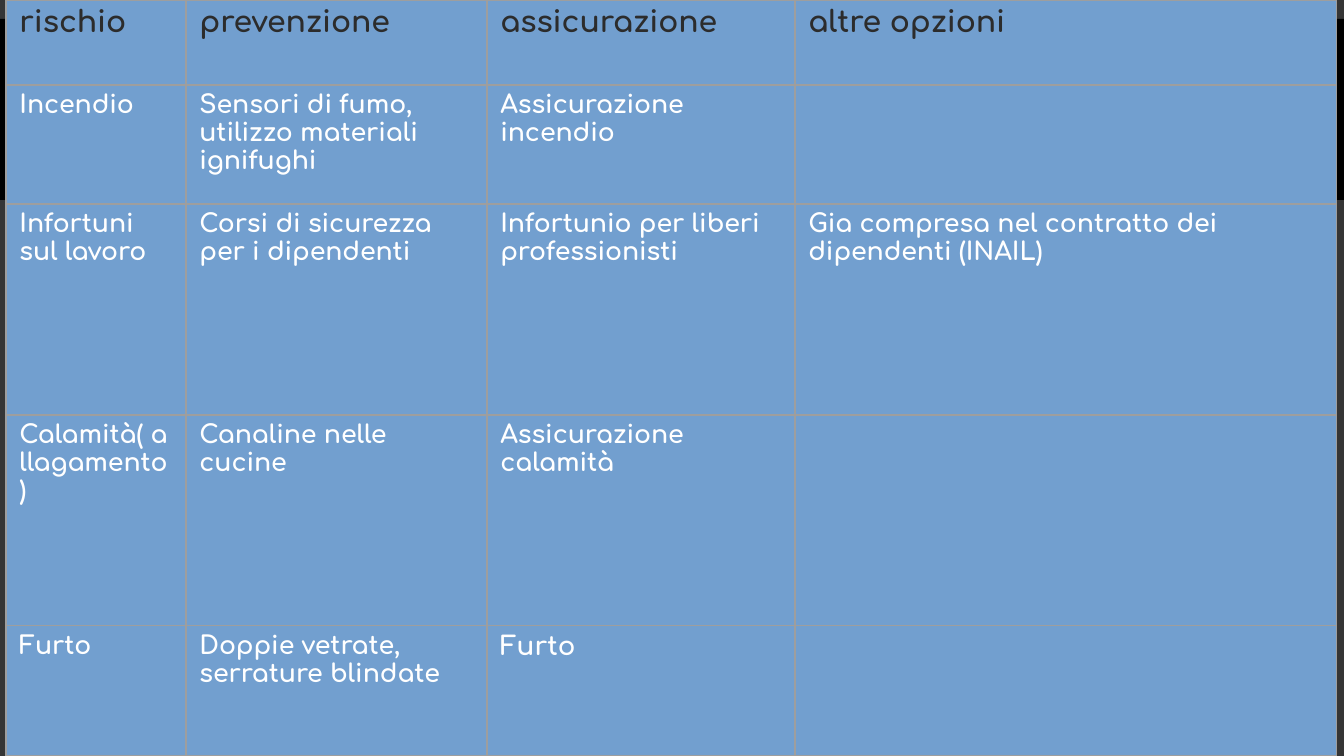
from typing import NamedTuple

from lxml import etree
from pptx import Presentation
from pptx.dml.color import RGBColor
from pptx.enum.shapes import MSO_SHAPE
from pptx.oxml.ns import qn
from pptx.util import Pt

RECTANGLE = MSO_SHAPE.RECTANGLE
BLANK_LAYOUT = 6
EMU_PER_PX = 6804

PAGE_COLOR = RGBColor(0x35, 0x35, 0x35)
BAND_COLOR = RGBColor(0x00, 0x00, 0x00)
CELL_COLOR = RGBColor(0x72, 0x9F, 0xCF)
HEADER_COLOR = RGBColor(0x2C, 0x2C, 0x2C)
BODY_COLOR = RGBColor(0xFF, 0xFF, 0xFF)
BORDER_COLOR = RGBColor(0x9E, 0x9E, 0x9E)

FONT = "Comfortaa"
HEADER_SIZE = 16
BODY_SIZE = 13.5
BORDER_WIDTH = 0.75
BORDER_SIDES = ("a:lnL", "a:lnR", "a:lnT", "a:lnB")

PAGE_WIDTH, PAGE_HEIGHT = 1344, 756
BAND_TOP, BAND_HEIGHT = 19, 181
TABLE_LEFT = 6
COLUMN_WIDTHS = (180, 301, 308, 542)


class RiskRow(NamedTuple):
    height: int
    risk: str
    prevention: str
    insurance: str
    other: str = ""
    insurance_size: float = BODY_SIZE


HEADER = RiskRow(85, "rischio", "prevenzione", "assicurazione", "altre opzioni", HEADER_SIZE)
RISKS = (
    RiskRow(119, "Incendio", "Sensori di fumo, utilizzo materiali ignifughi",
            "Assicurazione incendio"),
    RiskRow(211, "Infortuni sul lavoro", "Corsi di sicurezza per i dipendenti",
            "Infortunio per liberi professionisti",
            "Gia compresa nel contratto dei dipendenti (INAIL)"),
    RiskRow(211, "Calamità( allagamento)", "Canaline nelle cucine",
            "Assicurazione calamità"),
    RiskRow(130, "Furto", "Doppie vetrate, serrature blindate", "Furto",
            insurance_size=14),
)


def px(length: int) -> int:
    return length * EMU_PER_PX


def add_band(page) -> None:
    band = page.shapes.add_shape(RECTANGLE, 0, px(BAND_TOP), px(PAGE_WIDTH), px(BAND_HEIGHT))
    band.shadow.inherit = False
    band.fill.solid()
    band.fill.fore_color.rgb = BAND_COLOR
    band.line.fill.background()


def add_borders(cell) -> None:
    """Draw all four sides; the lines must precede the fill in the cell's XML."""
    properties = cell._tc.get_or_add_tcPr()
    for position, side in enumerate(BORDER_SIDES):
        line = etree.Element(qn(side), w=str(Pt(BORDER_WIDTH)))
        fill = etree.SubElement(line, qn("a:solidFill"))
        etree.SubElement(fill, qn("a:srgbClr"), val=str(BORDER_COLOR))
        properties.insert(position, line)


def fill_cell(cell, text: str, size: float, color: RGBColor) -> None:
    cell.fill.solid()
    cell.fill.fore_color.rgb = CELL_COLOR
    add_borders(cell)
    para = cell.text_frame.paragraphs[0]
    para.font.size = Pt(size)
    if text:
        span = para.add_run()
        span.text = text
        span.font.name = FONT
        span.font.size = Pt(size)
        span.font.bold = True
        span.font.color.rgb = color


def add_risk_table(page, rows: tuple[RiskRow, ...]) -> None:
    table = page.shapes.add_table(
        len(rows), len(COLUMN_WIDTHS), px(TABLE_LEFT), 0,
        px(sum(COLUMN_WIDTHS)), px(sum(row.height for row in rows)),
    ).table
    for column, width in zip(table.columns, COLUMN_WIDTHS):
        column.width = px(width)
    for row_index, row in enumerate(rows):
        table.rows[row_index].height = px(row.height)
        is_header = row is HEADER
        size = HEADER_SIZE if is_header else BODY_SIZE
        color = HEADER_COLOR if is_header else BODY_COLOR
        entries = (
            (row.risk, size),
            (row.prevention, size),
            (row.insurance, row.insurance_size),
            (row.other, size),
        )
        for column_index, (text, text_size) in enumerate(entries):
            fill_cell(table.cell(row_index, column_index), text, text_size, color)


def main() -> None:
    deck = Presentation()
    deck.slide_width = px(PAGE_WIDTH)
    deck.slide_height = px(PAGE_HEIGHT)
    page = deck.slides.add_slide(deck.slide_layouts[BLANK_LAYOUT])
    page.background.fill.solid()
    page.background.fill.fore_color.rgb = PAGE_COLOR
    add_band(page)
    add_risk_table(page, (HEADER, *RISKS))
    deck.save("out.pptx")


if __name__ == "__main__":
    main()
